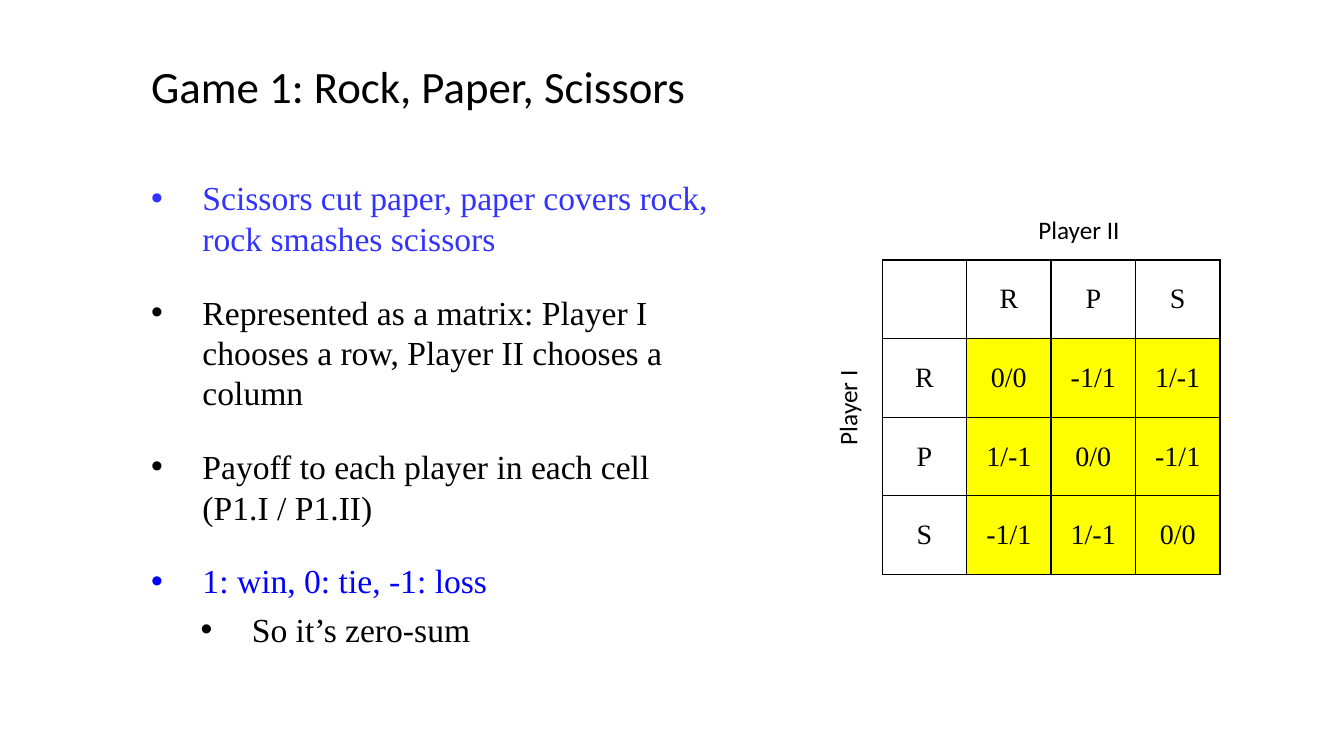
import pptx
import pptx.dml.color
import pptx.enum.text
import pptx.util
from lxml import etree
from pptx.oxml.ns import qn
from pptx.util import Inches

BLACK, WHITE, YELLOW = "000000", "FFFFFF", "FFFF00"
SANS, SERIF = "Calibri", "Times New Roman"

TITLE = "Game 1: Rock, Paper, Scissors"
# text, colour, left indent (inches), space before (points)
RULES = [
    ("Scissors cut paper, paper covers rock, rock smashes scissors", "3333FF", 0.51, 0),
    ("Represented as a matrix: Player I chooses a row, Player II chooses a column",
     BLACK, 0.51, 18),
    ("Payoff to each player in each cell (P1.I / P1.II)", BLACK, 0.51, 18),
    ("1: win, 0: tie, -1: loss", "0000FF", 0.51, 18),
    ("So it’s zero-sum", BLACK, 1, 0),
]
HANGING = 0.51
PAYOFFS = [
    ["", "R", "P", "S"],
    ["R", "0/0", "-1/1", "1/-1"],
    ["P", "1/-1", "0/0", "-1/1"],
    ["S", "-1/1", "1/-1", "0/0"],
]
MATRIX_LEFT, MATRIX_TOP, MATRIX_WIDTH, MATRIX_HEIGHT = 8.75, 2.58, 3.35, 3.12
# text, left, top, rotation
PLAYERS = [("Player II", 10.2, 2.08, 0), ("Player I", 7.73, 3.64, 270)]


def rgb(colour):
    return pptx.dml.color.RGBColor.from_string(colour)


def write(paragraph, text, size, font=SERIF, colour=BLACK, align=None,
          before=0, after=0, indent=None):
    """Fill a paragraph; an indent also gives it a hanging bullet."""
    if indent is not None:
        properties = paragraph._p.get_or_add_pPr()
        properties.set("marL", str(Inches(indent)))
        properties.set("indent", str(-Inches(HANGING)))
        etree.SubElement(properties, qn("a:buFont"), typeface="Arial")
        etree.SubElement(properties, qn("a:buChar"), char="•")
    paragraph.alignment = align
    paragraph.space_before = pptx.util.Pt(before)
    paragraph.space_after = pptx.util.Pt(after)
    run = paragraph.add_run()
    run.text = text
    run.font.size = pptx.util.Pt(size)
    run.font.name = font
    run.font.color.rgb = rgb(colour)


def add_box(slide, left, top, width, height, wrap=True):
    box = slide.shapes.add_textbox(*map(Inches, (left, top, width, height)))
    box.text_frame.word_wrap = wrap
    return box


def add_borders(cell):
    properties = cell._tc.get_or_add_tcPr()
    for position, side in enumerate(("lnL", "lnR", "lnT", "lnB")):
        line = etree.Element(qn(f"a:{side}"), w=str(pptx.util.Pt(1)))
        fill = etree.SubElement(line, qn("a:solidFill"))
        etree.SubElement(fill, qn("a:srgbClr"), val=BLACK)
        properties.insert(position, line)


def add_matrix(slide):
    size = len(PAYOFFS)
    matrix = slide.shapes.add_table(
        size, size, Inches(MATRIX_LEFT), Inches(MATRIX_TOP),
        Inches(MATRIX_WIDTH), Inches(MATRIX_HEIGHT)).table
    for row, payoffs in enumerate(PAYOFFS):
        for column, payoff in enumerate(payoffs):
            cell = matrix.cell(row, column)
            cell.fill.solid()
            cell.fill.fore_color.rgb = rgb(YELLOW if row and column else WHITE)
            cell.vertical_anchor = pptx.enum.text.MSO_ANCHOR.MIDDLE
            add_borders(cell)
            if payoff:
                write(cell.text_frame.paragraphs[0], payoff, 20,
                      align=pptx.enum.text.PP_ALIGN.CENTER)


def main():
    deck = pptx.Presentation()
    deck.slide_width, deck.slide_height = Inches(13.33), Inches(7.5)
    slide = deck.slides.add_slide(deck.slide_layouts[6])

    title = add_box(slide, 1.4, 0.53, 5.55, 0.64, wrap=False)
    write(title.text_frame.paragraphs[0], TITLE, 32, font=SANS)

    rules = add_box(slide, 1.4, 1.71, 5.82, 4.83).text_frame
    for number, (text, colour, indent, before) in enumerate(RULES):
        paragraph = rules.add_paragraph() if number else rules.paragraphs[0]
        write(paragraph, text, 24, colour=colour, indent=indent, before=before, after=6)

    add_matrix(slide)
    for text, left, top, rotation in PLAYERS:
        player = add_box(slide, left, top, 1.35, 0.4)
        player.rotation = rotation
        write(player.text_frame.paragraphs[0], text, 18, font=SANS)

    deck.save("out.pptx")


if __name__ == "__main__":
    main()
